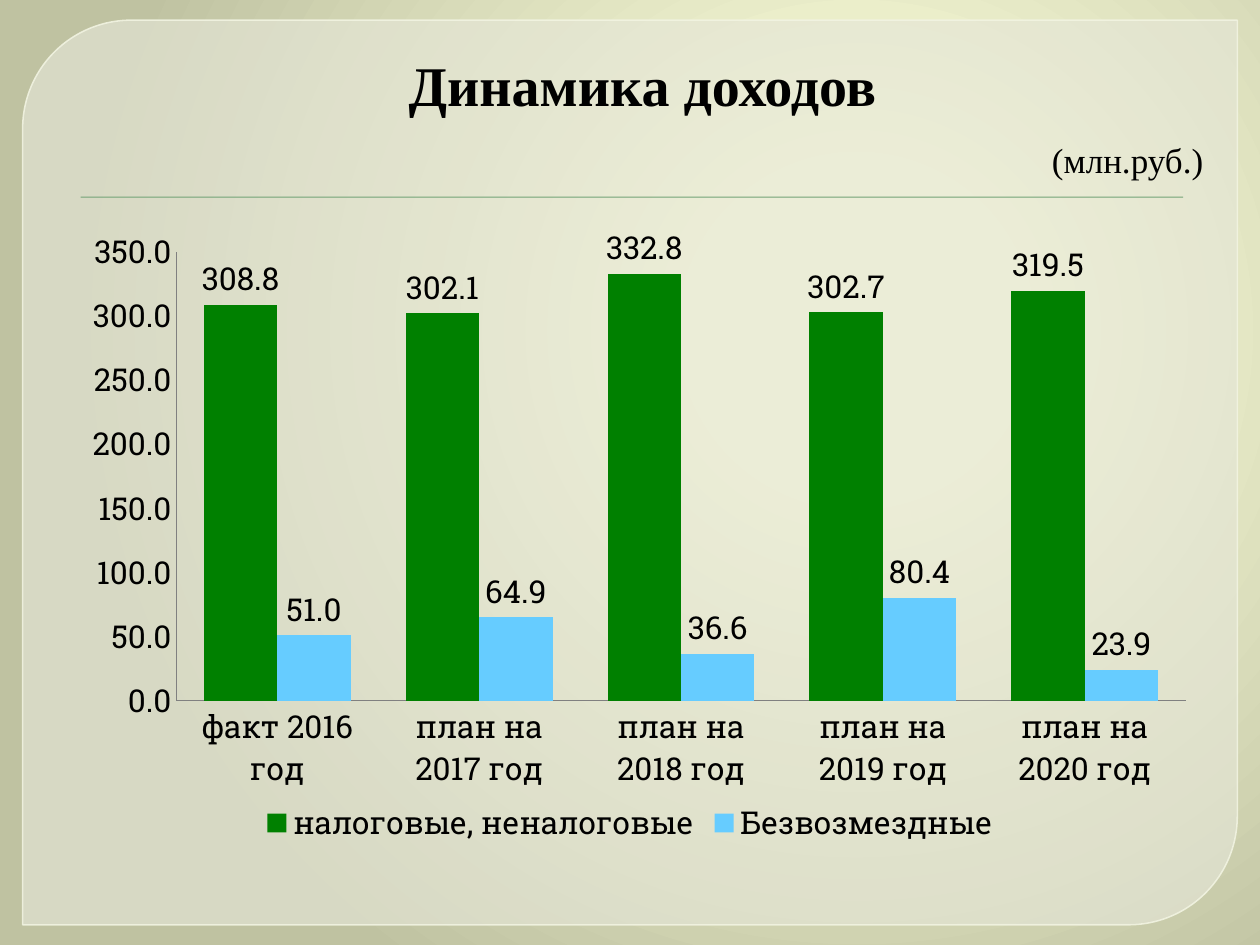
import pptx
import pptx.chart.data
import pptx.dml.color
import pptx.enum.chart
import pptx.enum.shapes
import pptx.enum.text
import pptx.oxml
import pptx.oxml.ns
import pptx.util

Inches = pptx.util.Inches
Pt = pptx.util.Pt
RGBColor = pptx.dml.color.RGBColor
qn = pptx.oxml.ns.qn
Shapes = pptx.enum.shapes.MSO_SHAPE
Align = pptx.enum.text.PP_ALIGN

BLACK = RGBColor(0x00, 0x00, 0x00)
PANEL = RGBColor(0xE5, 0xE6, 0xD7)
PANEL_EDGE = RGBColor(0xF2, 0xF4, 0xE2)
RULE = RGBColor(0x72, 0xA3, 0x76)
AXIS = RGBColor(0x80, 0x80, 0x80)
TAX_GREEN = RGBColor(0x00, 0x80, 0x00)
GRANT_BLUE = RGBColor(0x66, 0xCC, 0xFF)
GLOW = [(0, "FBFED9"), (20, "F9FCD8"), (100, "BFC2A1")]


class IncomeSlide:
    heading_font = "Times New Roman"
    chart_font = "Roboto Slab"
    number_format = "#,##0.0"

    def __init__(self, slide):
        self.slide = slide

    def background(self, stops, left, top):
        fill = self.slide.background.fill
        fill.gradient()
        gradient = self.slide.element.find(".//" + qn("a:gradFill"))
        stop_xml = "".join(
            f'<a:gs pos="{position * 1000}"><a:srgbClr val="{color}"/></a:gs>'
            for position, color in stops
        )
        glow = pptx.oxml.parse_xml(
            f'<a:gradFill {pptx.oxml.ns.nsdecls("a")} rotWithShape="1">'
            f"<a:gsLst>{stop_xml}</a:gsLst>"
            f'<a:path path="circle"><a:fillToRect l="{left * 1000}" t="{top * 1000}" '
            f'r="{(100 - left) * 1000}" b="{(100 - top) * 1000}"/></a:path></a:gradFill>'
        )
        gradient.getparent().replace(gradient, glow)

    def shape(self, kind, box, color, edge=None):
        shape = self.slide.shapes.add_shape(kind, *map(Inches, box))
        shape.shadow.inherit = False
        shape.fill.solid()
        shape.fill.fore_color.rgb = color
        if edge is None:
            shape.line.fill.background()
        else:
            shape.line.color.rgb = edge
            shape.line.width = Pt(0.87)
        return shape

    def opacity(self, shape, fill, line):
        colors = shape.element.spPr.iter(qn("a:srgbClr"))
        for color, percent in zip(colors, (fill, line)):
            alpha = color.makeelement(qn("a:alpha"), {"val": str(percent * 1000)})
            color.append(alpha)

    def heading(self, box, lines):
        frame = self.slide.shapes.add_textbox(*map(Inches, box)).text_frame
        frame.word_wrap = True
        frame.margin_left = frame.margin_right = 0
        frame.margin_top = frame.margin_bottom = 0
        for index, (text, size, bold, align, gap) in enumerate(lines):
            paragraph = frame.add_paragraph() if index else frame.paragraphs[0]
            paragraph.alignment = align
            paragraph.space_before = Pt(gap)
            run = paragraph.add_run()
            run.text = text
            run.font.name = self.heading_font
            run.font.size = Pt(size)
            run.font.bold = bold
            run.font.color.rgb = BLACK

    def columns(self, box, years, incomes, plot_area):
        figures = pptx.chart.data.CategoryChartData(number_format=self.number_format)
        figures.categories = years
        for name, values, _ in incomes:
            figures.add_series(name, values)
        chart = self.slide.shapes.add_chart(
            pptx.enum.chart.XL_CHART_TYPE.COLUMN_CLUSTERED, *map(Inches, box), figures
        ).chart
        chart.has_title = False
        chart.font.name = self.chart_font
        chart.font.size = Pt(18)
        chart.font.color.rgb = BLACK
        chart.has_legend = True
        chart.legend.position = pptx.enum.chart.XL_LEGEND_POSITION.BOTTOM
        chart.legend.include_in_layout = False

        for axis in (chart.category_axis, chart.value_axis):
            axis.has_major_gridlines = False
            axis.major_tick_mark = pptx.enum.chart.XL_TICK_MARK.NONE
            axis.minor_tick_mark = pptx.enum.chart.XL_TICK_MARK.NONE
            axis.format.line.color.rgb = AXIS
            axis.format.line.width = Pt(0.75)
        chart.value_axis.minimum_scale = 0
        chart.value_axis.maximum_scale = 350
        chart.value_axis.major_unit = 50
        chart.value_axis.tick_labels.number_format = self.number_format
        chart.value_axis.tick_labels.number_format_is_linked = False

        plot = chart.plots[0]
        plot.gap_width = 75
        plot.overlap = 0
        plot.vary_by_categories = False
        for series, (_, _, color) in zip(plot.series, incomes):
            series.invert_if_negative = False
            series.format.fill.solid()
            series.format.fill.fore_color.rgb = color
            labels = series.data_labels
            labels.show_value = True
            labels.number_format = self.number_format
            labels.number_format_is_linked = False
            labels.position = pptx.enum.chart.XL_LABEL_POSITION.OUTSIDE_END
        self.place_plot(chart, plot_area)

    def place_plot(self, chart, plot_area):
        area = chart.element.find(".//" + qn("c:plotArea"))
        for layout in area.findall(qn("c:layout")):
            area.remove(layout)
        sizes = "".join(
            f'<c:{tag} val="{value}"/>' for tag, value in zip("xywh", plot_area)
        )
        area.insert(0, pptx.oxml.parse_xml(
            f'<c:layout {pptx.oxml.ns.nsdecls("c")}><c:manualLayout>'
            '<c:layoutTarget val="inner"/><c:xMode val="edge"/><c:yMode val="edge"/>'
            f"{sizes}</c:manualLayout></c:layout>"
        ))


def main():
    deck = pptx.Presentation()
    deck.slide_width = Inches(10)
    deck.slide_height = Inches(7.5)
    page = IncomeSlide(deck.slides.add_slide(deck.slide_layouts[6]))

    page.background(GLOW, 68, 35)
    panel = page.shape(
        Shapes.ROUND_2_DIAG_RECTANGLE, (0.18, 0.16, 9.64, 7.18), PANEL, PANEL_EDGE
    )
    panel.adjustments[0] = 0.12
    panel.adjustments[1] = 0
    page.opacity(panel, 65, 88)
    page.shape(Shapes.RECTANGLE, (0.64, 1.56, 8.75, 0.01), RULE)
    page.heading((0.65, 0.4, 8.9, 1), [
        ("Динамика доходов", 32, True, Align.CENTER, 0),
        ("(млн.руб.)", 20, False, Align.RIGHT, 12),
    ])
    years = ["факт 2016 год"] + [f"план на {year} год" for year in range(2017, 2021)]
    incomes = [
        ("налоговые, неналоговые", (308.8, 302.1, 332.8, 302.7, 319.5), TAX_GREEN),
        ("Безвозмездные", (51, 64.9, 36.6, 80.4, 23.9), GRANT_BLUE),
    ]
    page.columns((0.5, 1.8, 9, 4.95), years, incomes, (0.1, 0.04, 0.89, 0.72))
    deck.save("out.pptx")


if __name__ == "__main__":
    main()
